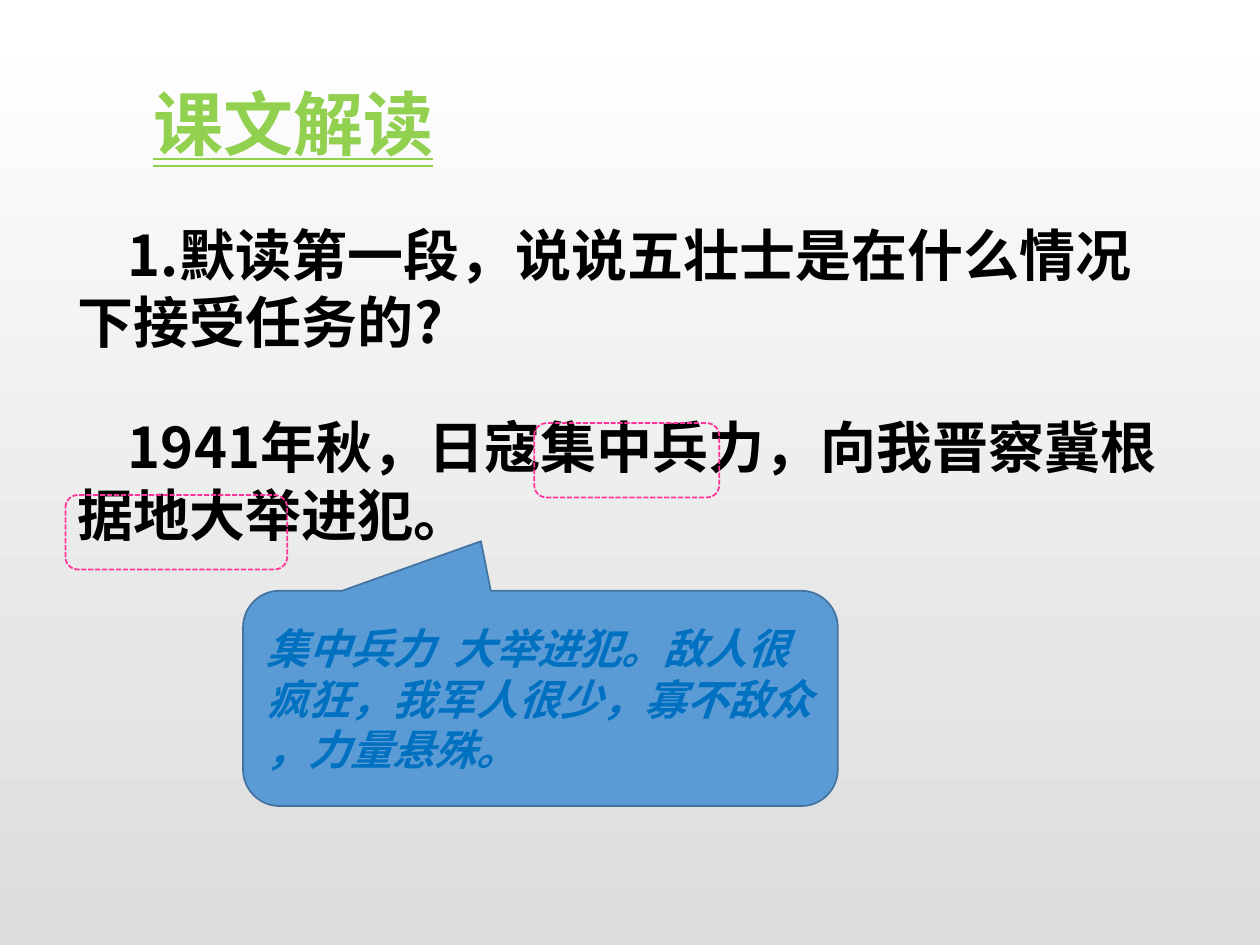
from lxml import etree
from pptx import Presentation
from pptx import util as u
from pptx.dml.color import RGBColor
from pptx.enum import dml, shapes, text
from pptx.oxml import ns

WHITE = RGBColor(0xFF, 0xFF, 0xFF)
GREY = RGBColor(0xDC, 0xDC, 0xDC)
BLACK = RGBColor(0x00, 0x00, 0x00)
GREEN = RGBColor(0x92, 0xD0, 0x50)
BLUE = RGBColor(0x5B, 0x9B, 0xD5)
DARK_BLUE = RGBColor(0x43, 0x73, 0x9E)
TEXT_BLUE = RGBColor(0x00, 0x70, 0xC0)
PINK = RGBColor(0xFF, 0x33, 0x99)


class LessonSlide:
    font_name = "Noto Sans CJK SC"
    line_width = u.Pt(1)

    def __init__(self, prs):
        self.slide = prs.slides.add_slide(prs.slide_layouts[6])

    def background(self, top, bottom):
        fill = self.slide.background.fill
        fill.gradient()
        fill.gradient_angle = 270
        for stop, color, position in zip(fill.gradient_stops, (top, bottom), (0, 1)):
            stop.color.rgb = color
            stop.position = position

    def set_text(self, tf, words, size, color, indent=0):
        p = tf.paragraphs[0]
        p.text = words
        p.alignment = text.PP_ALIGN.LEFT
        font = p.font
        font.name = self.font_name
        font.size = u.Pt(size)
        font.bold = True
        font.color.rgb = color
        pPr = p._p.get_or_add_pPr()
        pPr.set("indent", str(u.Cm(indent)))
        ea = etree.SubElement(pPr.find(ns.qn("a:defRPr")), ns.qn("a:ea"))
        ea.set("typeface", self.font_name)
        return font

    def text_box(self, box, words, size, color, indent=0, wrap=True):
        tf = self.slide.shapes.add_textbox(*map(u.Cm, box)).text_frame
        tf.word_wrap = wrap
        tf.auto_size = text.MSO_AUTO_SIZE.SHAPE_TO_FIT_TEXT
        return self.set_text(tf, words, size, color, indent)

    def outline_shape(self, kind, box, line_color):
        sp = self.slide.shapes.add_shape(kind, *map(u.Cm, box))
        sp.shadow.inherit = False
        sp.fill.background()
        sp.line.color.rgb = line_color
        sp.line.width = self.line_width
        return sp

    def callout(self, box, words):
        kind = shapes.MSO_SHAPE.ROUNDED_RECTANGULAR_CALLOUT
        sp = self.outline_shape(kind, box, DARK_BLUE)
        sp.fill.solid()
        sp.fill.fore_color.rgb = BLUE
        for i, value in enumerate((-0.1, -0.73, 0.17)):
            sp.adjustments[i] = value
        tf = sp.text_frame
        tf.word_wrap = True
        tf.vertical_anchor = text.MSO_ANCHOR.MIDDLE
        self.set_text(tf, words, 24, TEXT_BLUE).italic = True

    def highlight(self, box):
        sp = self.outline_shape(shapes.MSO_SHAPE.ROUNDED_RECTANGLE, box, PINK)
        sp.line.dash_style = dml.MSO_LINE.SQUARE_DOT


def main():
    prs = Presentation()
    prs.slide_width, prs.slide_height = u.Cm(25.4), u.Cm(19.05)
    s = LessonSlide(prs)
    s.background(WHITE, GREY)
    s.text_box((1.32, 4.32, 22.5, 3), "1.默读第一段，说说五壮士是在什么情况下接受任务的?",
               32, BLACK, indent=1.01)
    title = s.text_box((2.84, 1.5, 6.22, 1.96), "课文解读", 40, GREEN, wrap=False)
    title.underline = text.MSO_UNDERLINE.DOUBLE_LINE
    s.text_box((1.32, 8.2, 22.78, 3), "1941年秋，日寇集中兵力，向我晋察冀根据地大举进犯。",
               32, BLACK, indent=1.01)
    s.callout((4.9, 11.91, 11.99, 4.34),
              "集中兵力  大举进犯。敌人很疯狂，我军人很少，寡不敌众 ，力量悬殊。")
    for box in ((10.77, 8.53, 3.73, 1.5), (1.32, 9.98, 4.47, 1.5)):
        s.highlight(box)
    prs.save("out.pptx")


if __name__ == "__main__":
    main()
